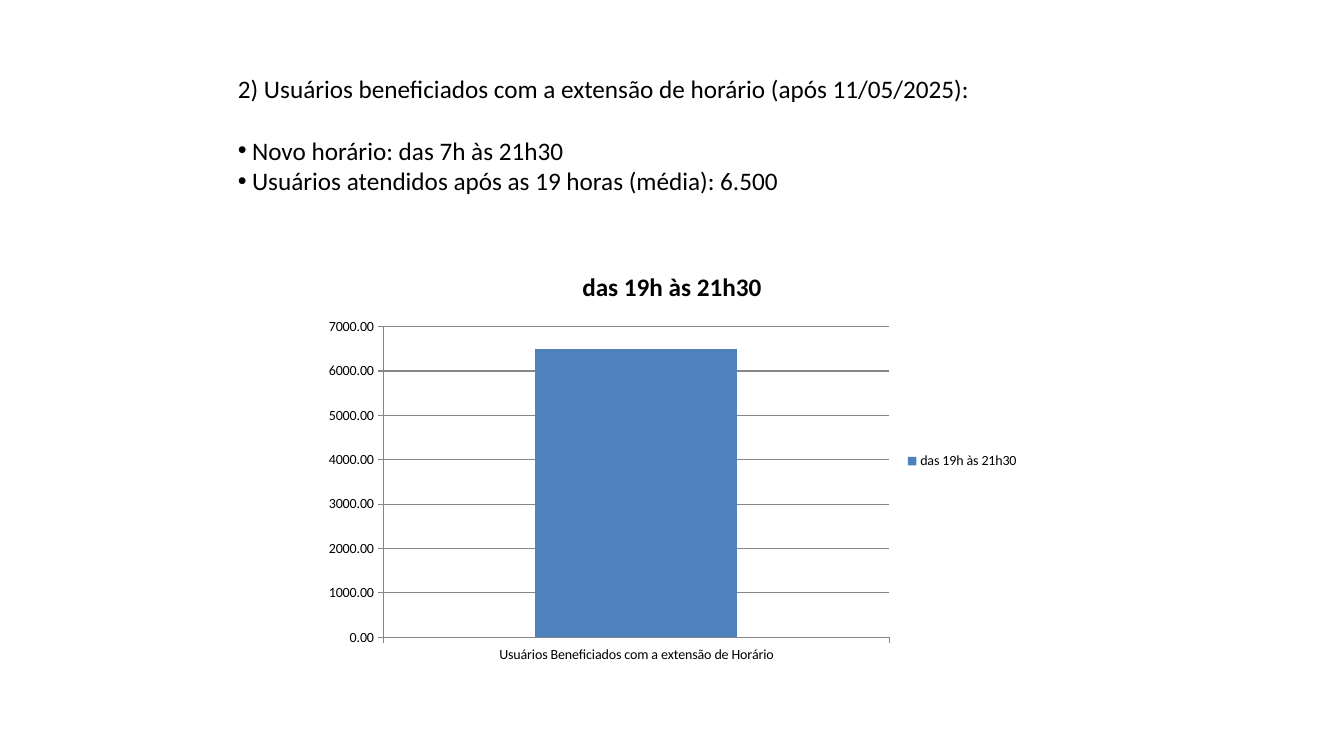
import pptx
import pptx.util
import pptx.chart.data
import pptx.dml.color
import pptx.enum.chart
import pptx.enum.text
import pptx.oxml.ns
import lxml.etree

Inches = pptx.util.Inches
Pt = pptx.util.Pt
RGB = pptx.dml.color.RGBColor.from_string
kinds = pptx.enum.chart
COLORS = {"text": "000000", "bar": "4F81BD", "line": "868686"}
FONT = "Calibri"


def style(font, size, bold=False):
    font.name = FONT
    font.size = Pt(size)
    font.bold = bold
    font.color.rgb = RGB(COLORS["text"])


def place(holder, text, top, height):
    """Move a placeholder and fill it with left-aligned 18 pt lines."""
    holder.left, holder.top = Inches(2.26), Inches(top)
    holder.width, holder.height = Inches(8.35), Inches(height)
    frame = holder.text_frame
    frame.text = text
    frame.word_wrap = True
    frame.auto_size = pptx.enum.text.MSO_AUTO_SIZE.NONE
    frame.vertical_anchor = pptx.enum.text.MSO_ANCHOR.TOP
    for para in frame.paragraphs:
        para.alignment = pptx.enum.text.PP_ALIGN.LEFT
        para.space_before = Pt(0)
        for run in para.runs:
            style(run.font, 18)
    return frame


deck = pptx.Presentation()
deck.slide_width, deck.slide_height = Inches(13.33), Inches(7.5)
slide = deck.slides.add_slide(deck.slide_layouts[1])

# Heading and bullets
place(slide.shapes.title,
      "2) Usuários beneficiados com a extensão de horário (após 11/05/2025):",
      0.68, 0.4)
points = ["Novo horário: das 7h às 21h30",
          "Usuários atendidos após as 19 horas (média): 6.500"]
body = place(slide.placeholders[1], "\n".join(points), 1.29, 0.7)
for para in body.paragraphs:
    props = para._p.get_or_add_pPr()
    props.set("marL", str(Inches(0.14)))
    props.set("indent", str(-Inches(0.14)))
    for tag, key, value in (("a:buFont", "typeface", "Arial"),
                            ("a:buChar", "char", "•")):
        mark = lxml.etree.SubElement(props, pptx.oxml.ns.qn(tag))
        mark.set(key, value)

# Column chart
name = "das 19h às 21h30"
data = pptx.chart.data.CategoryChartData()
data.categories = ["Usuários Beneficiados com a extensão de Horário"]
data.add_series(name, [6500])
chart = slide.shapes.add_chart(
    kinds.XL_CHART_TYPE.COLUMN_CLUSTERED,
    Inches(3.12), Inches(2.49), Inches(7.09), Inches(4.17), data).chart
style(chart.font, 10)

chart.has_title = True
title = chart.chart_title.text_frame
title.text = name
style(title.paragraphs[0].runs[0].font, 18, True)
chart.chart_title.include_in_layout = False

chart.has_legend = True
chart.legend.position = kinds.XL_LEGEND_POSITION.RIGHT
chart.legend.include_in_layout = False

plot = chart.plots[0]
plot.gap_width = 150
plot.vary_by_categories = False
bar = plot.series[0]
bar.format.fill.solid()
bar.format.fill.fore_color.rgb = RGB(COLORS["bar"])

scale = chart.value_axis
scale.minimum_scale, scale.maximum_scale = 0, 7000
scale.major_unit = 1000
scale.has_major_gridlines = True
scale.tick_labels.number_format = "0.00"
scale.tick_labels.number_format_is_linked = False
for axis in (scale, chart.category_axis):
    axis.major_tick_mark = kinds.XL_TICK_MARK.OUTSIDE
    axis.minor_tick_mark = kinds.XL_TICK_MARK.NONE
for part in (scale, chart.category_axis, scale.major_gridlines):
    part.format.line.color.rgb = RGB(COLORS["line"])
    part.format.line.width = Pt(0.75)

deck.save("out.pptx")
